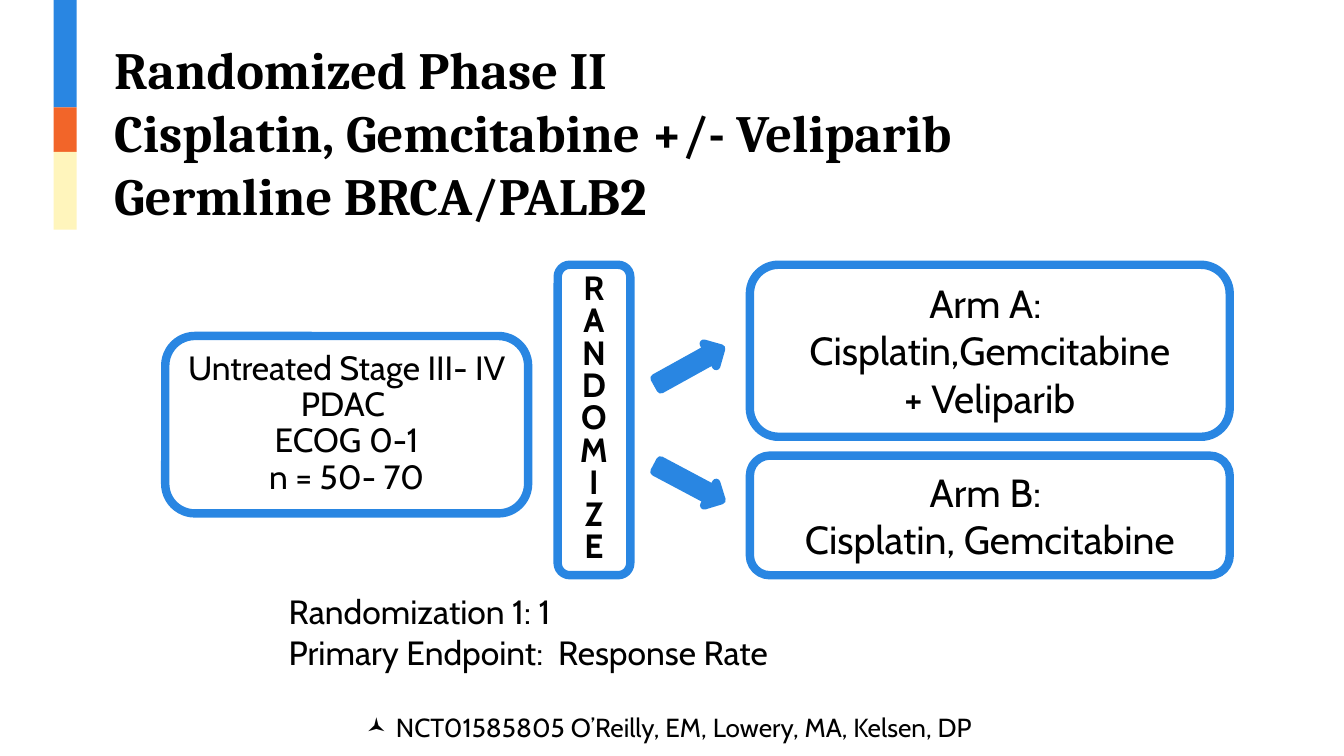
from lxml.etree import SubElement
from pptx import Presentation
from pptx.dml.color import RGBColor
from pptx.enum.shapes import MSO_SHAPE as Shape
from pptx.enum.text import MSO_ANCHOR as Anchor, MSO_AUTO_SIZE as AutoSize, PP_ALIGN as Align
from pptx.oxml.ns import qn
from pptx.util import Emu, Pt

PX = 9144
BLUE = RGBColor(0x29, 0x86, 0xE2)
ORANGE = RGBColor(0xF2, 0x65, 0x29)
CREAM = RGBColor(0xFF, 0xF5, 0xBC)
WHITE = RGBColor(0xFF, 0xFF, 0xFF)
BLACK = RGBColor(0, 0, 0)


def to_emu(*lengths):
    return [Emu(length * PX) for length in lengths]


def place(holder, box):
    holder.left, holder.top, holder.width, holder.height = to_emu(*box)
    return holder


def set_bullet(para, symbol, margin, hanging):
    props = para._p.get_or_add_pPr()
    props.set("marL", str(margin * PX))
    props.set("indent", str(-hanging * PX))
    SubElement(props, qn("a:buChar")).set("char", symbol)


def write(holder, lines, size=18, font="Cabin", bold=False, align=Align.LEFT,
          anchor=Anchor.TOP, spacing=1.0, wrap=True, bullet=None):
    frame = holder.text_frame
    frame.auto_size = AutoSize.NONE
    frame.word_wrap = wrap
    frame.vertical_anchor = anchor
    for index, line in enumerate(lines):
        para = frame.add_paragraph() if index else frame.paragraphs[0]
        para.alignment = align
        para.line_spacing = spacing
        para.space_before = Pt(0)
        if bullet:
            set_bullet(para, bullet, 17, 22)
        span = para.add_run()
        span.text = line
        span.font.size = Pt(size)
        span.font.name = font
        span.font.bold = bold
        span.font.color.rgb = BLACK


def add_block(page, kind, box, fill, line=None):
    block = page.shapes.add_shape(kind, *to_emu(*box))
    block.shadow.inherit = False
    block.fill.solid()
    block.fill.fore_color.rgb = fill
    if line is None:
        block.line.fill.background()
    else:
        block.line.color.rgb = line
        block.line.width = Pt(4.5)
    return block


def add_card(page, box, lines, **style):
    card = add_block(page, Shape.ROUNDED_RECTANGLE, box, WHITE, BLUE)
    write(card, lines, align=Align.CENTER, **style)


def add_stripe(page, box):
    left, top, width, height = box
    for share, color in ((80, BLUE), (33, ORANGE), (58, CREAM)):
        part = height * share // 171
        add_block(page, Shape.RECTANGLE, (left, top, width, part), color)
        top += part


def add_heading(page, box):
    title = place(page.shapes.title, box)
    write(title, ["Randomized Phase II", "Cisplatin, Gemcitabine +/- Veliparib",
                  "Germline BRCA/PALB2"], size=28, font="Cambria", bold=True)


def add_trial_diagram(page, box):
    left, top, width, height = box
    add_card(page, (left, top + 53, 270, 132),
             ["Untreated Stage III- IV PDAC ", "ECOG 0-1", "n = 50- 70"], spacing=0.9)
    add_card(page, (left + 292, top, 54, height), "RANDOMIZE",
             bold=True, spacing=0.8, wrap=False)
    arm_width = 357
    arm_left = left + width - arm_width
    add_card(page, (arm_left, top, arm_width, 128),
             ["Arm A: ", "Cisplatin,Gemcitabine", "+ Veliparib"], size=21)
    add_card(page, (arm_left, top + height - 89, arm_width, 89),
             ["Arm B: ", "Cisplatin, Gemcitabine"], size=21, anchor=Anchor.MIDDLE)
    for offset, angle in ((66, -29), (153, 28)):
        arrow = add_block(page, Shape.RIGHT_ARROW,
                          (left + 363, top + offset, 54, 19), BLUE, BLUE)
        arrow.rotation = angle


def add_notes_line(page, box):
    notes = page.shapes.add_textbox(*to_emu(*box))
    write(notes, ["Randomization 1: 1", "Primary Endpoint:  Response Rate"])


def add_reference(page, box):
    reference = place(page.placeholders[1], box)
    write(reference, ["NCT01585805 O’Reilly, EM, Lowery, MA, Kelsen, DP"],
          size=14, align=Align.CENTER, anchor=Anchor.MIDDLE, bullet="🟁")


def main():
    deck = Presentation()
    deck.slide_width = Emu(1000 * PX)
    deck.slide_height = Emu(deck.slide_width * 9 // 16)
    page = deck.slides.add_slide(deck.slide_layouts[1])
    add_stripe(page, (40, 0, 17, 171))
    add_heading(page, (75, 23, 900, 151))
    add_trial_diagram(page, (123, 197, 792, 231))
    add_notes_line(page, (205, 435, 602, 71))
    add_reference(page, (181, 519, 639, 44))
    deck.save("out.pptx")


if __name__ == "__main__":
    main()
